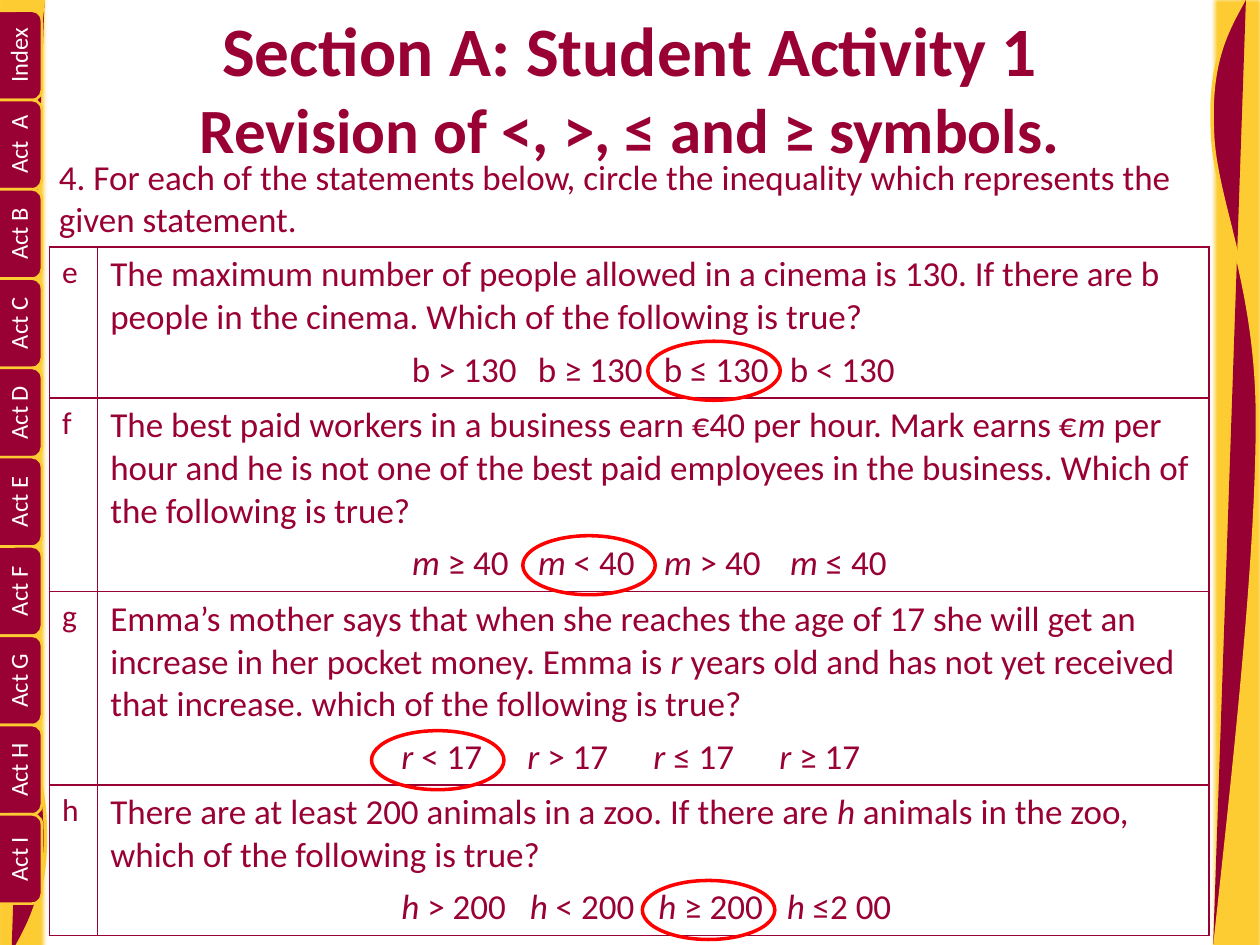
"""Build a quiz slide on inequality symbols with side tabs and circled answers."""
from dataclasses import dataclass

from lxml import etree
from pptx import Presentation
from pptx.dml.color import RGBColor
from pptx.enum.shapes import MSO_SHAPE
from pptx.enum.text import MSO_ANCHOR, PP_ALIGN
from pptx.oxml.ns import qn
from pptx.util import Cm, Pt

RECT, ROUND, OVAL = MSO_SHAPE.RECTANGLE, MSO_SHAPE.ROUNDED_RECTANGLE, MSO_SHAPE.OVAL
CENTER, LEFT = PP_ALIGN.CENTER, PP_ALIGN.LEFT
MIDDLE, BOTTOM, TOP = MSO_ANCHOR.MIDDLE, MSO_ANCHOR.BOTTOM, MSO_ANCHOR.TOP
FONT = "Calibri"
COLORS = {"maroon": "990033", "swoosh": "970033", "gold": "FDCC33",
          "ring": "FF0000", "white": "FFFFFF"}
LINE_H, OUTER_PAD, INNER_PAD = 0.86, 0.13, 0.1
TAB_PITCH = 1.8
TABS = ["Index", "Act  A"] + [f"Act {letter}" for letter in "BCDEFGHI"]
SWOOSH = [(0.91, -0.33),
          (0.46, 3.78), (0, 7.92), (0, 10.74),
          (0, 13.56), (0.89, 15.19), (0.91, 16.61),
          (0.97, 18.03), (0.58, 18.64), (0.23, 19.28)]


@dataclass
class Question:
    """A statement, its options with *italic* marks, and the answer ring."""
    letter: str
    statement: str
    lines: int
    options: str
    ring_left: float
    ring_top: float
    stops: tuple = ()


QUESTIONS = [
    Question("e", "The maximum number of people allowed in a cinema is 130. If there are b "
             "people in the cinema. Which of the following is true?", 2,
             "b > 130 \tb ≥ 130 \tb ≤ 130 \tb < 130", 13.06, 6.88),
    Question("f", "The best paid workers in a business earn €40 per hour. Mark earns €*m *per "
             "hour and he is not one of the best paid employees in the business. Which of "
             "the following is true?", 3,
             "*m *≥ 40 \t*m *< 40 \t*m *> 40 \t*m *≤ 40 ", 10.54, 10.8),
    Question("g", "Emma’s mother says that when she reaches the age of 17 she will get an "
             "increase in her pocket money. Emma is *r *years old and has not yet received "
             "that increase. which of the following is true?", 3,
             "*r *< 17 \t*r *> 17 \t*r *≤ 17 \t*r *≥ 17 \t", 7.49, 14.73),
    Question("h", "There are at least 200 animals in a zoo. If there are *h *animals in the zoo, "
             "which of the following is true?", 2,
             "*h *> 200 \t*h *< 200 \t*h *≥ 200 \t*h *≤2 00 \t", 12.95, 17.75,
             (2.59, 5.18, 7.77, 10.16)),
]


def rgb(name: str) -> RGBColor:
    """Look up a named colour."""
    return RGBColor.from_string(COLORS[name])


def style_run(r, size: float, color: str = "maroon", bold: bool = False,
              italic: bool = False) -> None:
    """Format one run."""
    r.font.name, r.font.size = FONT, Pt(size)
    r.font.bold, r.font.italic = bold, italic
    r.font.color.rgb = rgb(color)


def paint(sp, fill: str | None, line: str | None = None, width: float = 1) -> None:
    """Set fill and outline and drop the shadow."""
    sp.shadow.inherit = False
    if fill:
        sp.fill.solid()
        sp.fill.fore_color.rgb = rgb(fill)
    else:
        sp.fill.background()
    if line:
        sp.line.color.rgb = rgb(line)
        sp.line.width = Pt(width)
    else:
        sp.line.fill.background()


def add_shape(s, kind, left: float, top: float, width: float, height: float):
    """Add a preset shape measured in centimetres."""
    return s.shapes.add_shape(kind, Cm(left), Cm(top), Cm(width), Cm(height))


def add_text(s, text: str, box: tuple, sizes: list[float], align=LEFT, anchor=TOP,
             bold: bool = False) -> None:
    """Add a text box with one size for each line."""
    tf = s.shapes.add_textbox(*(Cm(v) for v in box)).text_frame
    tf.word_wrap, tf.vertical_anchor = True, anchor
    p = tf.paragraphs[0]
    p.text, p.alignment = text, align
    for r, size in zip(p.runs, sizes):
        style_run(r, size, bold=bold)


def add_band(s, left: float, top: float) -> None:
    """Draw a gold side band with soft edges."""
    sp = add_shape(s, RECT, left, top, 1.09, 19.38)
    paint(sp, "gold")
    effects = sp._element.spPr.find(qn("a:effectLst"))
    etree.SubElement(effects, qn("a:softEdge"), rad=str(Pt(2.5)))


def add_swoosh(s, mirrored: bool) -> None:
    """Draw the curved side ornament, turned half round for the right edge."""
    points = [(Cm(25.35 - x), Cm(19.2 - y)) if mirrored else (Cm(x), Cm(y))
              for x, y in SWOOSH]
    builder = s.shapes.build_freeform(*points[0], scale=1.0)
    builder.add_line_segments(points[1:], close=False)
    sp = builder.convert_to_shape()
    segments = list(sp._element.iter(qn("a:lnTo")))
    for i in range(0, len(segments), 3):
        curve = etree.SubElement(segments[i].getparent(), qn("a:cubicBezTo"))
        for segment in segments[i:i + 3]:
            curve.append(segment[0])
            segment.getparent().remove(segment)
    paint(sp, "swoosh", "gold", 2)


def add_tab(s, label: str, index: int) -> None:
    """Draw one upright side tab."""
    sp = add_shape(s, ROUND, -0.65, 0.52 + index * TAB_PITCH, TAB_PITCH, 1.19)
    sp.rotation = 270
    paint(sp, "maroon", "gold", 1.5)
    tf = sp.text_frame
    tf.text, tf.word_wrap, tf.vertical_anchor = label, False, BOTTOM
    p = tf.paragraphs[0]
    p.alignment = CENTER
    style_run(p.runs[0], 14, "white")


def set_borders(cell, visible: str) -> None:
    """Draw the sides named in visible and hide the others."""
    tc_pr = cell._tc.get_or_add_tcPr()
    for side in "LRTB":
        ln = etree.SubElement(tc_pr, qn(f"a:ln{side}"), w=str(Pt(1)))
        if side in visible:
            fill = etree.SubElement(ln, qn("a:solidFill"))
            etree.SubElement(fill, qn("a:srgbClr"), val=COLORS["maroon"])
        else:
            etree.SubElement(ln, qn("a:noFill"))


def fill_cell(cell, text: str, size: float, borders: str, align=LEFT,
              stops: tuple = ()) -> None:
    """Write a cell, setting text between asterisks in italics."""
    set_borders(cell, borders)
    cell.fill.background()
    cell.margin_top = Cm(OUTER_PAD if "T" in borders else INNER_PAD)
    cell.margin_bottom = Cm(OUTER_PAD if "B" in borders else INNER_PAD)
    p = cell.text_frame.paragraphs[0]
    p.alignment = align
    if stops:
        tab_list = etree.SubElement(p._p.get_or_add_pPr(), qn("a:tabLst"))
        for stop in stops:
            etree.SubElement(tab_list, qn("a:tab"), pos=str(Cm(stop)), algn="l")
    for i, part in enumerate(text.split("*")):
        if part:
            r = p.add_run()
            r.text = part
            style_run(r, size, italic=i % 2 == 1)


def add_questions(s) -> None:
    """Add the table, two rows to a question."""
    table = s.shapes.add_table(2 * len(QUESTIONS), 2, Cm(1), Cm(4.98),
                               Cm(23.37), Cm(13.88)).table
    table.first_row = table.horz_banding = False
    table.columns[0].width, table.columns[1].width = Cm(0.97), Cm(22.4)
    pads = OUTER_PAD + INNER_PAD
    for i, q in enumerate(QUESTIONS):
        top, low = 2 * i, 2 * i + 1
        table.rows[top].height = Cm(q.lines * LINE_H + pads)
        table.rows[low].height = Cm(LINE_H + pads)
        fill_cell(table.cell(top, 0), q.letter, 18, "LRT")
        fill_cell(table.cell(top, 1), q.statement, 20, "LRT")
        fill_cell(table.cell(low, 0), "", 18, "LRB")
        fill_cell(table.cell(low, 1), q.options, 20, "LRB", CENTER, q.stops)


def main() -> None:
    """Compose and save the slide."""
    prs = Presentation()
    prs.slide_width, prs.slide_height = Cm(25.4), Cm(19.05)
    s = prs.slides.add_slide(prs.slide_layouts[6])
    for left, top, mirrored in ((24.41, -0.08, True), (-0.13, -0.13, False)):
        add_band(s, left, top)
        add_swoosh(s, mirrored)
    for i, label in enumerate(TABS):
        add_tab(s, label, i)
    add_text(s, "Section A: Student Activity 1\vRevision of <, >, ≤ and ≥ symbols.",
             (1.27, 0.15, 22.86, 3.18), [39.6, 36], CENTER, MIDDLE, bold=True)
    add_text(s, "4. For each of the statements below, circle the inequality which "
             "represents the given statement.", (0.94, 3.01, 24.46, 1.96), [20])
    add_questions(s)
    for q in QUESTIONS:
        paint(add_shape(s, OVAL, q.ring_left, q.ring_top, 2.67, 1.19), None, "ring", 2)
    prs.save("out.pptx")


if __name__ == "__main__":
    main()
